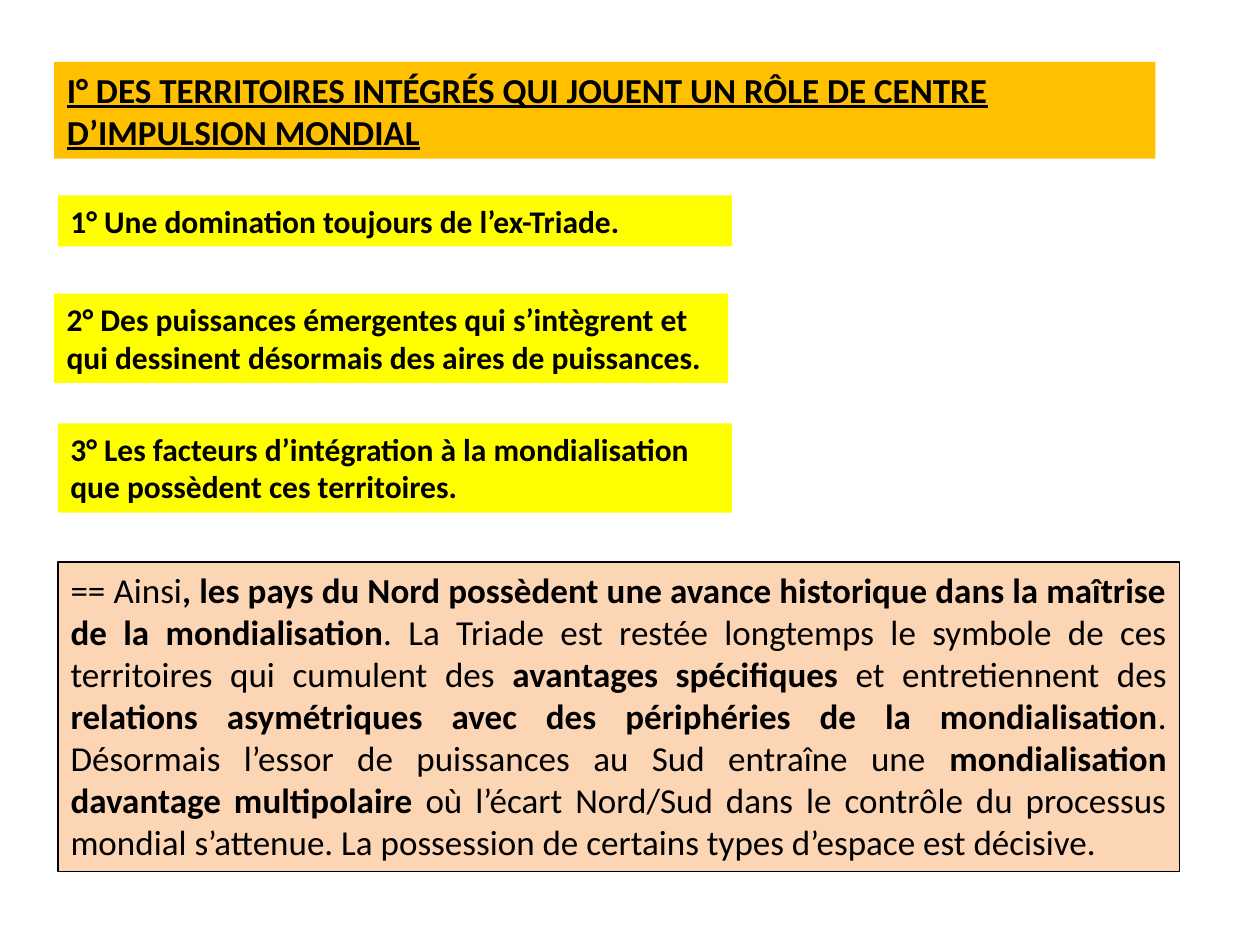
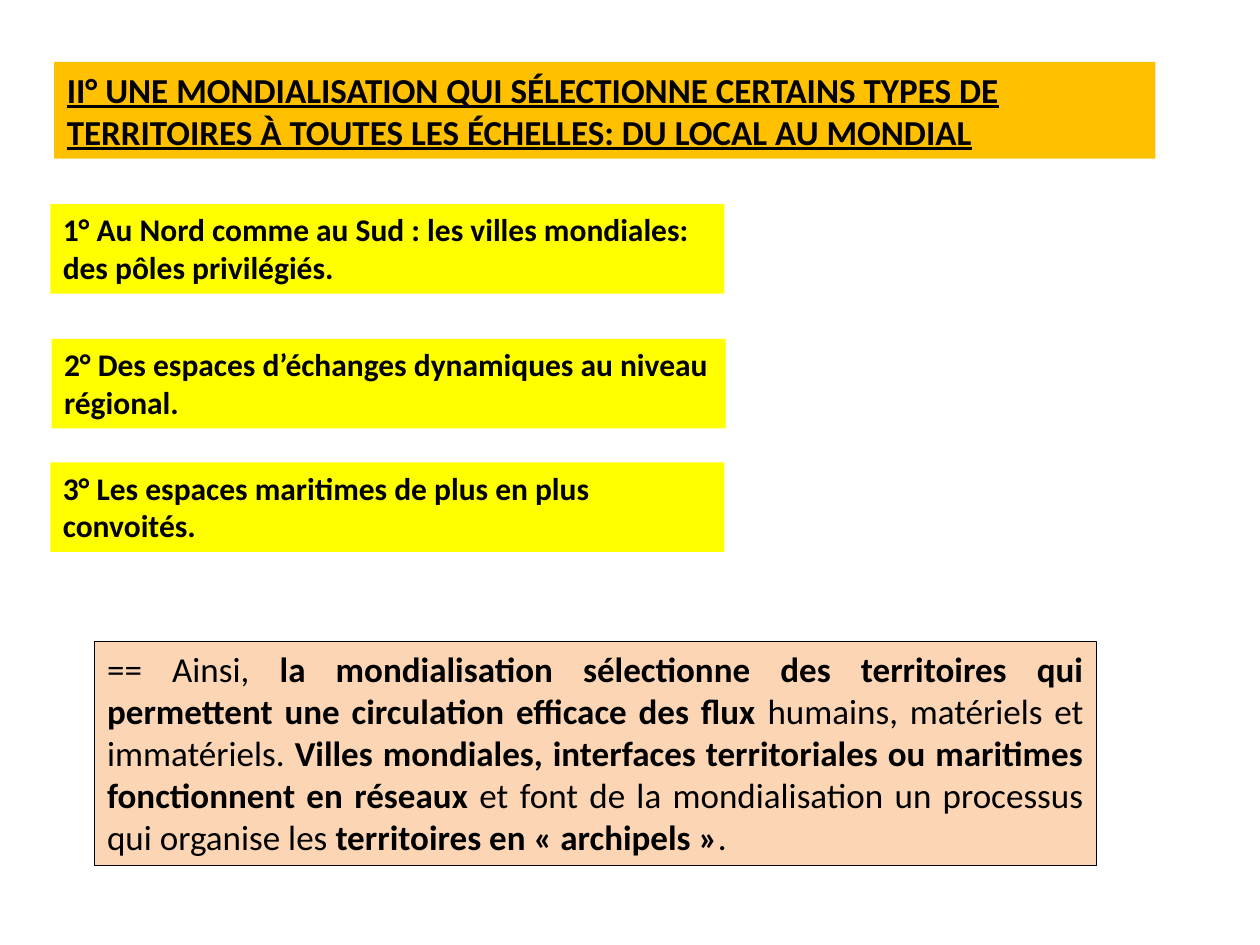
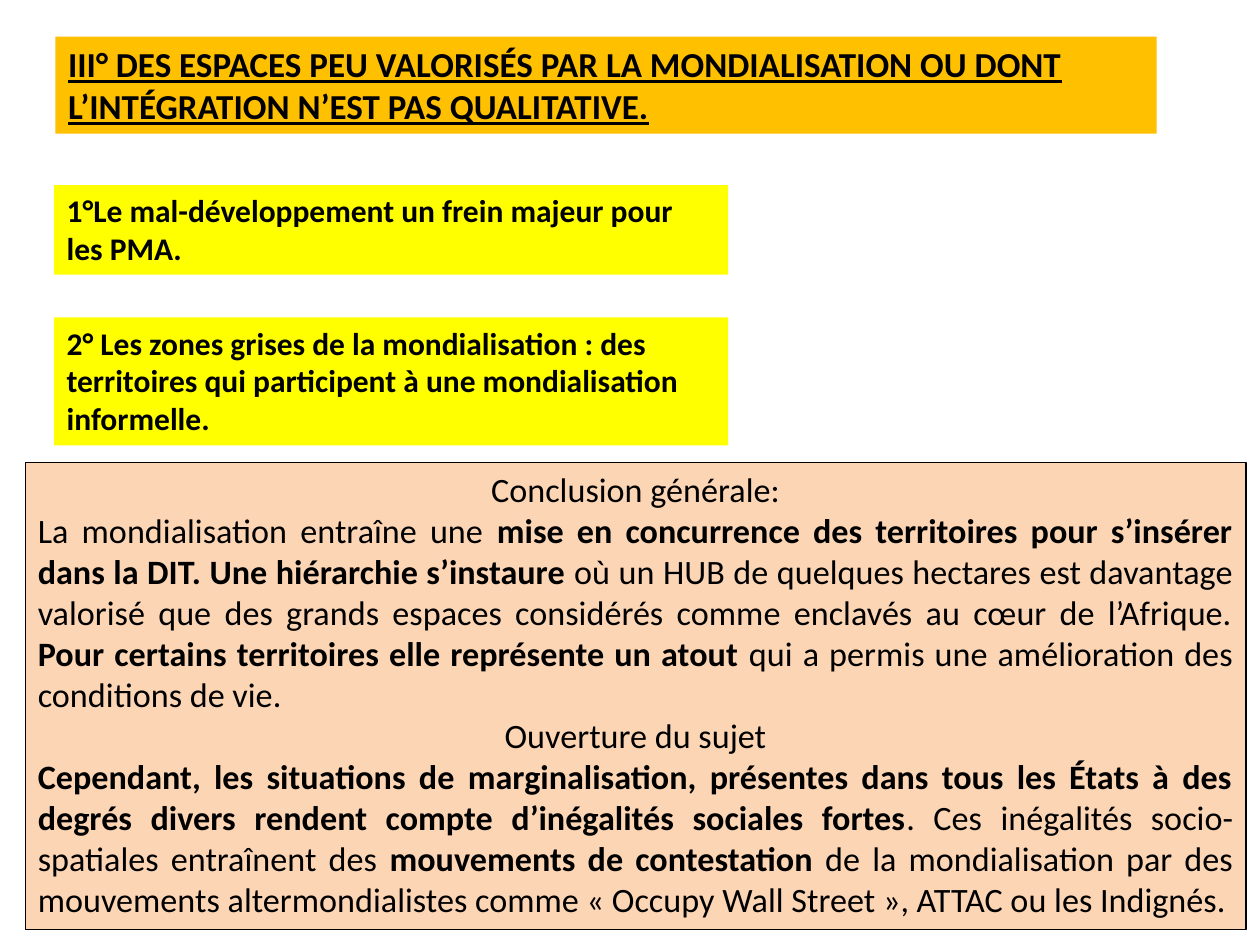
"""Builds three summary slides on territories in globalisation."""
from dataclasses import dataclass, field
from typing import Any

from lxml import etree
from pptx import Presentation
from pptx import util as u
from pptx.dml.color import RGBColor
from pptx.enum import text
from pptx.oxml.ns import qn

WIDTH, HEIGHT = u.Inches(10), u.Inches(7.5)
COLUMNS, ROWS = 100, 75
TITLE_AND_CONTENT = 1
LEFT, CENTER, JUSTIFY = (
    text.PP_ALIGN.LEFT, text.PP_ALIGN.CENTER, text.PP_ALIGN.JUSTIFY)


@dataclass(frozen=True)
class Theme:
    """Colours, fonts and type sizes shared by the slides."""
    font: str = "Calibri"
    ink: RGBColor = RGBColor(0, 0, 0)
    part_fill: RGBColor = RGBColor.from_string("FFC000")
    heading_fill: RGBColor = RGBColor.from_string("FFFF00")
    summary_fill: RGBColor = RGBColor.from_string("FCD5B5")
    part_size: float = 20
    heading_size: float = 18
    border: float = 0.75
    frame: dict[str, Any] = field(default_factory=lambda: {
        "word_wrap": True,
        "auto_size": text.MSO_AUTO_SIZE.NONE,
        "vertical_anchor": text.MSO_ANCHOR.TOP,
        "margin_left": u.Inches(0.1), "margin_right": u.Inches(0.1),
        "margin_top": u.Inches(0.05), "margin_bottom": u.Inches(0.05),
    })


THEME = Theme()


@dataclass(frozen=True)
class Area:
    """A rectangle in grid columns and rows."""
    column: float
    row: float
    columns: float
    rows: float

    def place(self) -> dict[str, int]:
        """Return the position and size as shape attributes."""
        across, down = WIDTH / COLUMNS, HEIGHT / ROWS
        return {"left": round(self.column * across), "top": round(self.row * down),
                "width": round(self.columns * across), "height": round(self.rows * down)}


@dataclass(frozen=True)
class Heading:
    """A numbered subheading with its corner and line count."""
    wording: str
    column: float
    row: float
    lines: int = 2

    def area(self) -> Area:
        """Return the box whose height follows from the line count."""
        return Area(self.column, self.row, 53.5, 1 + 3.05 * self.lines)


@dataclass(frozen=True)
class Paragraph:
    """A paragraph in which ** switches bold on and off."""
    wording: str
    align: text.PP_ALIGN = JUSTIFY


@dataclass(frozen=True)
class Part:
    """One part of the lesson, shown on one slide."""
    title: str
    title_column: float
    title_row: float
    headings: list[Heading]
    summary: list[Paragraph]
    summary_area: Area
    summary_size: float = 20


PARTS = [
    Part(
        "I° DES TERRITOIRES INTÉGRÉS QUI JOUENT UN RÔLE DE CENTRE D’IMPULSION MONDIAL",
        4.3, 4.9,
        [Heading("1° Une domination toujours de l’ex-Triade.", 4.6, 15.5, 1),
         Heading("2° Des puissances émergentes qui s’intègrent et qui dessinent "
                 "désormais des aires de puissances.", 4.3, 23.3),
         Heading("3° Les facteurs d’intégration à la mondialisation que possèdent "
                 "ces territoires.", 4.6, 33.6)],
        [Paragraph(
            "== Ainsi**, les pays du Nord possèdent une avance historique dans la "
            "maîtrise de la mondialisation**. La Triade est restée longtemps le symbole "
            "de ces territoires qui cumulent des **avantages spécifiques **et "
            "entretiennent des **relations asymétriques avec des périphéries de la "
            "mondialisation**. Désormais l’essor de puissances au Sud entraîne une "
            "**mondialisation davantage multipolaire **où l’écart Nord/Sud dans le "
            "contrôle du processus mondial s’attenue. La possession de certains types "
            "d’espace est décisive.")],
        Area(4.6, 44.6, 89, 24.6)),
    Part(
        "II° UNE MONDIALISATION QUI SÉLECTIONNE CERTAINS TYPES DE TERRITOIRES "
        "À TOUTES LES ÉCHELLES: DU LOCAL AU MONDIAL",
        4.3, 4.9,
        [Heading("1° Au Nord comme au Sud : les villes mondiales: des pôles "
                 "privilégiés.", 4, 16.2),
         Heading("2° Des espaces d’échanges dynamiques au niveau régional.", 4.1, 26.9),
         Heading("3° Les espaces maritimes de plus en plus convoités.", 4, 36.7)],
        [Paragraph(
            "== Ainsi, **la mondialisation sélectionne des territoires qui permettent "
            "une circulation efficace des flux **humains, matériels et immatériels. "
            "**Villes mondiales, interfaces territoriales ou maritimes fonctionnent en "
            "réseaux **et font de la mondialisation un processus qui organise les "
            "**territoires en « archipels »**.")],
        Area(7.5, 50.9, 79.5, 17.8)),
    Part(
        "III° DES ESPACES PEU VALORISÉS PAR LA MONDIALISATION OU DONT L’INTÉGRATION "
        "N’EST PAS QUALITATIVE.",
        4.4, 2.9,
        [Heading("1°Le mal-développement un frein majeur pour les PMA.", 4.3, 14.7),
         Heading("2° Les zones grises de la mondialisation : des territoires qui "
                 "participent à une mondialisation informelle.", 4.3, 25.2, 3)],
        [Paragraph("Conclusion générale:", CENTER),
         Paragraph(
             "La mondialisation entraîne une **mise en concurrence des territoires pour "
             "s’insérer dans la DIT. Une hiérarchie s’instaure **où un HUB de quelques "
             "hectares est davantage valorisé que des grands espaces considérés comme "
             "enclavés au cœur de l’Afrique. **Pour certains territoires elle représente "
             "un atout** qui a permis une amélioration des conditions de vie."),
         Paragraph("Ouverture du sujet", CENTER),
         Paragraph(
             "**Cependant, les situations de marginalisation, présentes dans tous les "
             "États à des degrés divers rendent compte d’inégalités sociales fortes**. "
             "Ces inégalités socio-spatiales entraînent des **mouvements de "
             "contestation** de la mondialisation par des mouvements altermondialistes "
             "comme « Occupy Wall Street », ATTAC ou les Indignés.")],
        Area(2, 36.7, 96.9, 37.1), 19.5),
]


def apply(target: Any, values: dict[str, Any]) -> None:
    """Set each named attribute on the target."""
    for name, value in values.items():
        setattr(target, name, value)


def fill_box(box: Any, area: Area, fill: RGBColor, paragraphs: list[Paragraph],
             size: float, underline: bool = False) -> None:
    """Place a box, colour it and write its paragraphs."""
    apply(box, area.place())
    box.fill.solid()
    box.fill.fore_color.rgb = fill
    frame = box.text_frame
    apply(frame, THEME.frame)
    for index, content in enumerate(paragraphs):
        line = frame.add_paragraph() if index else frame.paragraphs[0]
        apply(line, {"alignment": content.align, "space_before": u.Pt(0)})
        for order, wording in enumerate(content.wording.split("**")):
            if wording:
                run = line.add_run()
                run.text = wording
                apply(run.font, {"name": THEME.font, "size": u.Pt(size),
                                 "bold": order % 2 == 1, "underline": underline})
                run.font.color.rgb = THEME.ink


def remove_bullets(body: Any) -> None:
    """Clear the bullets and hanging indents of a body placeholder."""
    for line in body.text_frame.paragraphs:
        properties = line._p.get_or_add_pPr()
        for name in ("marL", "indent"):
            properties.set(name, "0")
        etree.SubElement(properties, qn("a:buNone"))


def add_part(deck: Any, part: Part) -> None:
    """Add the slide for one part of the lesson."""
    slide = deck.slides.add_slide(deck.slide_layouts[TITLE_AND_CONTENT])
    fill_box(slide.shapes.title, Area(part.title_column, part.title_row, 87.4, 7.7),
             THEME.part_fill, [Paragraph(f"**{part.title}**", LEFT)],
             THEME.part_size, underline=True)
    for heading in part.headings:
        area = heading.area()
        fill_box(slide.shapes.add_textbox(**area.place()), area, THEME.heading_fill,
                 [Paragraph(f"**{heading.wording}**", LEFT)], THEME.heading_size)
    summary = slide.placeholders[1]
    fill_box(summary, part.summary_area, THEME.summary_fill, part.summary,
             part.summary_size)
    remove_bullets(summary)
    summary.line.color.rgb = THEME.ink
    summary.line.width = u.Pt(THEME.border)


def main() -> None:
    """Build and save the deck."""
    deck = Presentation()
    apply(deck, {"slide_width": WIDTH, "slide_height": HEIGHT})
    for part in PARTS:
        add_part(deck, part)
    deck.save("out.pptx")


if __name__ == "__main__":
    main()
